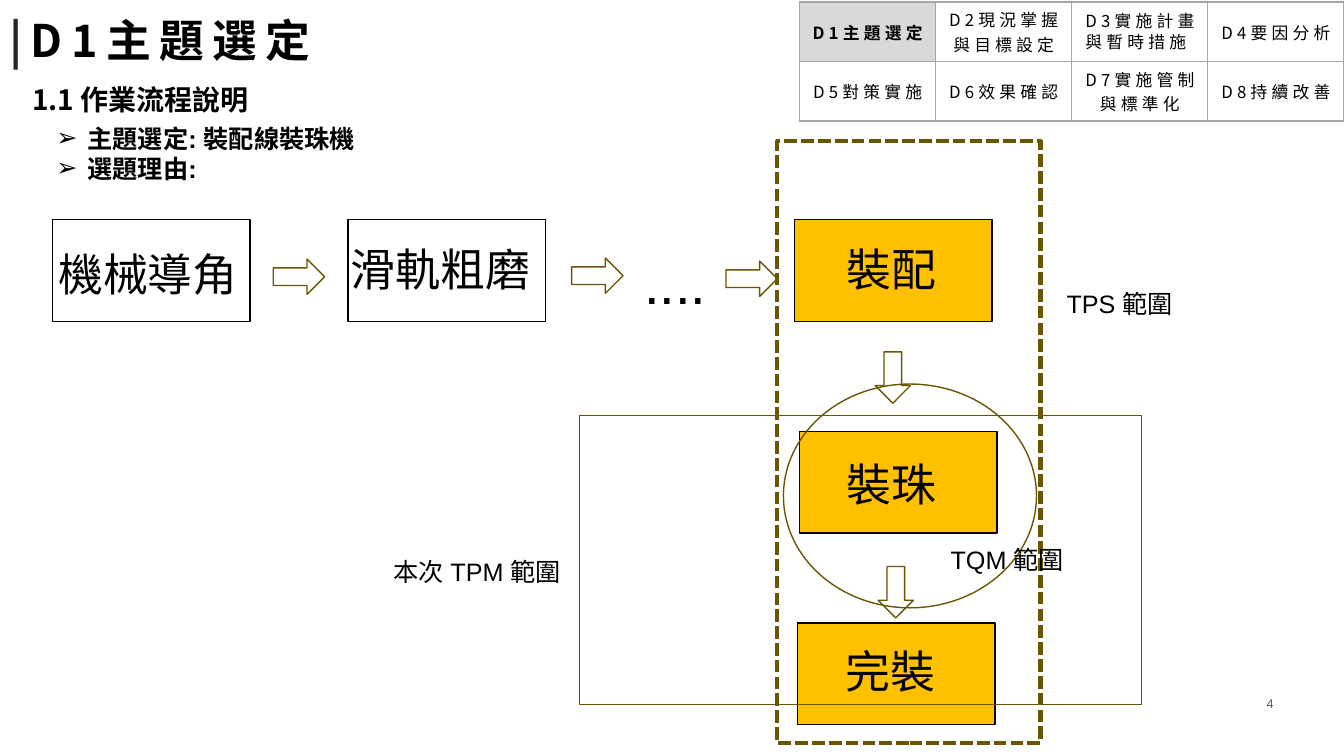
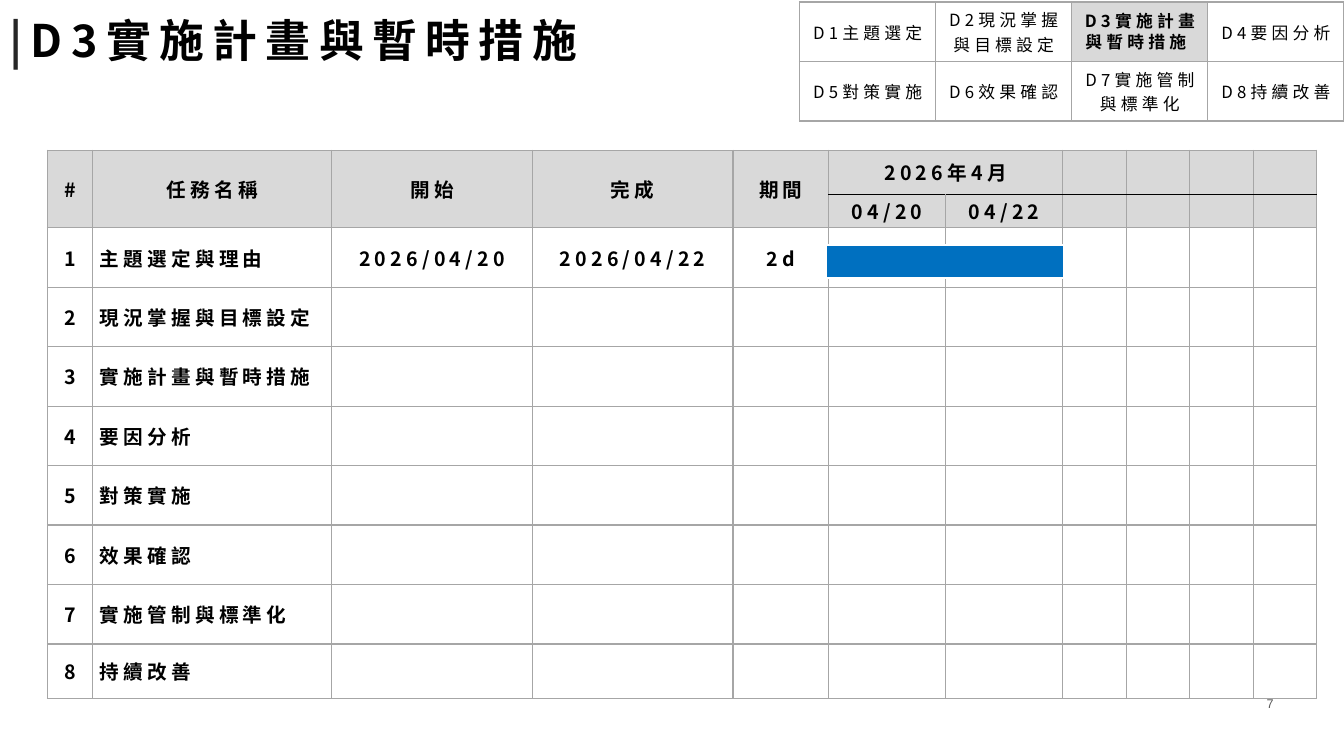
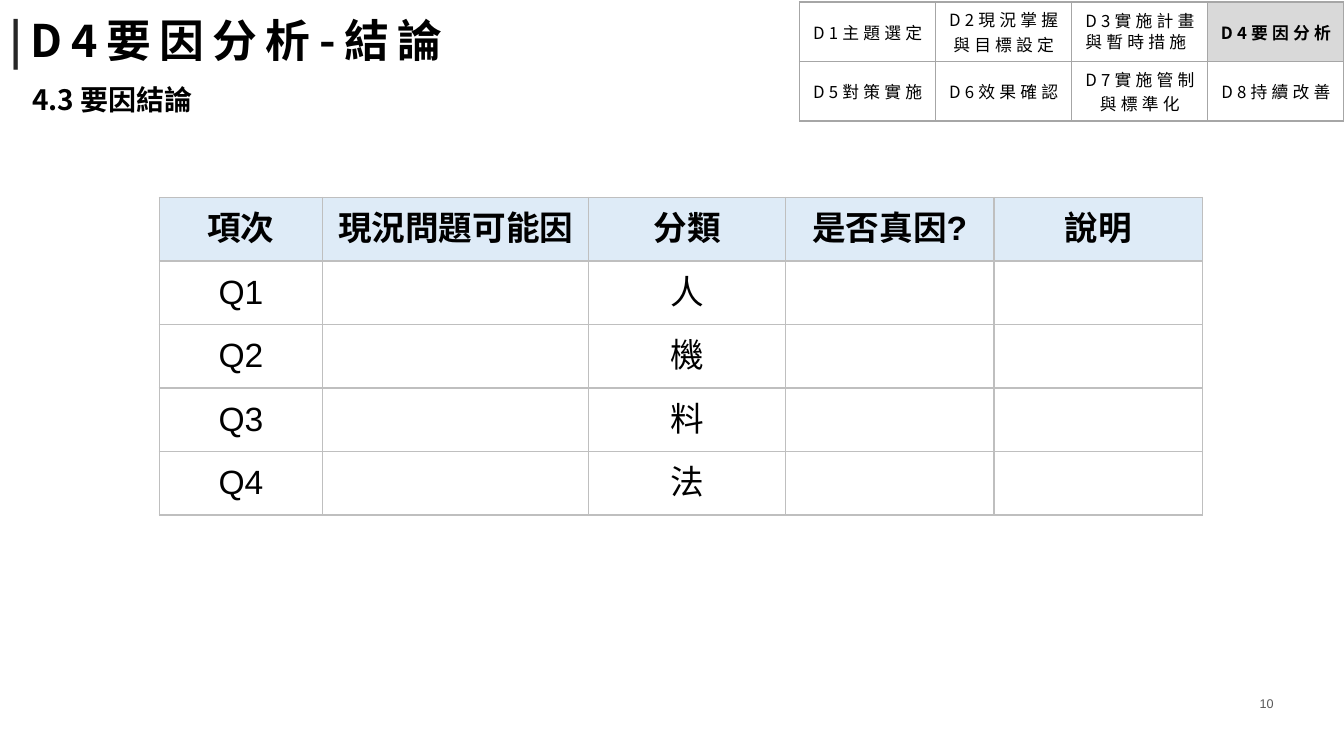
import dataclasses
import typing

import lxml.etree
import pptx
import pptx.dml.color
import pptx.enum.dml
import pptx.enum.shapes
import pptx.enum.text
import pptx.oxml.ns
import pptx.presentation
import pptx.slide
import pptx.table
import pptx.text.text
import pptx.util

Inches = pptx.util.Inches
Pt = pptx.util.Pt
qn = pptx.oxml.ns.qn
SHAPES = pptx.enum.shapes.MSO_SHAPE
ALIGN = pptx.enum.text.PP_ALIGN
MIDDLE = pptx.enum.text.MSO_ANCHOR.MIDDLE

COLORS = {
    "black": "000000", "bar": "262626", "number": "595959", "white": "FFFFFF",
    "grid": "A6A6A6", "light_grid": "BFBFBF", "active": "D9D9D9",
    "header": "DEEBF7", "process": "FFC000", "scope": "6A5600", "gantt": "0070C0",
}
SANS = "Noto Sans CJK SC"


def rgb(name: str) -> pptx.dml.color.RGBColor:
    return pptx.dml.color.RGBColor.from_string(COLORS[name])


@dataclasses.dataclass(frozen=True)
class Style:
    size: float
    bold: bool = False
    font: str = "Arial"
    color: str = "black"
    spacing: float = 0


@dataclasses.dataclass(frozen=True)
class Cell:
    text: str = ""
    fill: str = "white"
    bold: bool = False
    align: ALIGN = ALIGN.CENTER
    line_spacing: float = 1.0


@dataclasses.dataclass(frozen=True)
class Figure:
    kind: SHAPES
    left: float
    top: float
    width: float
    height: float
    line: str = "scope"
    fill: str | None = None
    weight: float = 1
    rotation: float = 0
    dashed: bool = False


@dataclasses.dataclass(frozen=True)
class Label:
    text: str
    left: float
    top: float
    width: float
    height: float
    size: float
    wrap: bool = False


TITLE = Style(32, True, SANS, spacing=6)
SUBTITLE = Style(20, True, SANS)
STEP = Style(12, font=SANS, spacing=3)
PLAN = Style(14, True, SANS, spacing=3)
CAUSE = Style(24)
TITLE_MARGINS = {"margin_left": 0.07, "margin_right": 0.07,
                 "margin_top": 0.04, "margin_bottom": 0.04}
PLAN_MARGINS = {"margin_left": 0.07, "margin_right": 0.07,
                "margin_top": 0, "margin_bottom": 0}
STEPS = [
    "D1主題選定", "D2現況掌握\n與目標設定", "D3實施計畫\n與暫時措施 ", "D4要因分析",
    "D5對策實施", "D6效果確認", "D7實施管制\n與標準化", "D8持續改善",
]


# Text
def add_run(paragraph: pptx.text.text._Paragraph, text: str, style: Style) -> None:
    run = paragraph.add_run()
    run.text = text
    values = {"size": Pt(style.size), "bold": style.bold, "name": style.font}
    for name, value in values.items():
        setattr(run.font, name, value)
    run.font.color.rgb = rgb(style.color)
    properties = run._r.get_or_add_rPr()
    lxml.etree.SubElement(properties, qn("a:ea")).set("typeface", style.font)
    if style.spacing:
        properties.set("spc", str(round(style.spacing * 100)))


def write(frame: pptx.text.text.TextFrame, text: str, style: Style,
          align: ALIGN = ALIGN.LEFT, line_spacing: float = 1.0) -> None:
    for index, line in enumerate(text.split("\n")):
        paragraph = frame.add_paragraph() if index else frame.paragraphs[0]
        paragraph.alignment = align
        if line_spacing != 1:
            paragraph.line_spacing = line_spacing
        add_run(paragraph, line, style)


def add_frame(slide: pptx.slide.Slide, left: float, top: float, width: float,
              height: float, wrap: bool = True) -> pptx.text.text.TextFrame:
    box = slide.shapes.add_textbox(Inches(left), Inches(top), Inches(width), Inches(height))
    box.text_frame.word_wrap = wrap
    return box.text_frame


def add_label(slide: pptx.slide.Slide, label: Label) -> None:
    frame = add_frame(slide, label.left, label.top, label.width, label.height, label.wrap)
    write(frame, label.text, Style(label.size))


def add_bullets(frame: pptx.text.text.TextFrame, text: str, style: Style) -> None:
    write(frame, text, style)
    for paragraph in frame.paragraphs:
        properties = paragraph._p.get_or_add_pPr()
        properties.set("marL", str(Inches(0.31)))
        properties.set("indent", str(-Inches(0.31)))
        lxml.etree.SubElement(properties, qn("a:buFont")).set("typeface", "Arial")
        lxml.etree.SubElement(properties, qn("a:buChar")).set("char", "➢")


# Shapes
def add_figure(slide: pptx.slide.Slide, figure: Figure) -> None:
    shape = slide.shapes.add_shape(
        figure.kind, Inches(figure.left), Inches(figure.top),
        Inches(figure.width), Inches(figure.height))
    shape.shadow.inherit = False
    shape.rotation = figure.rotation
    if figure.fill:
        shape.fill.solid()
        shape.fill.fore_color.rgb = rgb(figure.fill)
    else:
        shape.fill.background()
    shape.line.color.rgb = rgb(figure.line)
    shape.line.width = Pt(figure.weight)
    if figure.dashed:
        shape.line.dash_style = pptx.enum.dml.MSO_LINE.SQUARE_DOT
        # The preset dash is the short system dash
        shape.line._ln.find(qn("a:prstDash")).set("val", "sysDash")


# Tables
def set_border(cell: pptx.table._Cell, side: str, color: str) -> None:
    properties = cell._tc.get_or_add_tcPr()
    edge = properties.find(qn(f"a:ln{side}"))
    if edge is None:
        edge = lxml.etree.SubElement(properties, qn(f"a:ln{side}"), w=str(Pt(1)))
        fill = lxml.etree.SubElement(edge, qn("a:solidFill"))
        lxml.etree.SubElement(fill, qn("a:srgbClr"))
    edge.find(".//" + qn("a:srgbClr")).set("val", COLORS[color])


def add_grid(slide: pptx.slide.Slide, left: float, top: float,
             widths: typing.Sequence[float], heights: typing.Sequence[float],
             rows: typing.Sequence[typing.Sequence[Cell]], style: Style, border: str,
             margins: dict[str, float] | None = None) -> pptx.table.Table:
    table = slide.shapes.add_table(
        len(heights), len(widths), Inches(left), Inches(top),
        Inches(sum(widths)), Inches(sum(heights))).table
    table.first_row = table.horz_banding = False
    for column, width in zip(table.columns, widths):
        column.width = Inches(width)
    for row, height in zip(table.rows, heights):
        row.height = Inches(height)
    for r, row_cells in enumerate(rows):
        for c, content in enumerate(row_cells):
            cell = table.cell(r, c)
            for side in "LRTB":
                set_border(cell, side, border)
            cell.fill.solid()
            cell.fill.fore_color.rgb = rgb(content.fill)
            cell.vertical_anchor = MIDDLE
            for name, value in (margins or {}).items():
                setattr(cell, name, Inches(value))
            if content.text:
                cell_style = dataclasses.replace(style, bold=style.bold or content.bold)
                write(cell.text_frame, content.text, cell_style,
                      content.align, content.line_spacing)
    return table


# Parts shared by all slides
def add_step_map(slide: pptx.slide.Slide, active: int) -> None:
    cells = [
        Cell(step, "active" if number == active else "white", number == active,
             line_spacing=0.85 if number == 3 else 1.0)
        for number, step in enumerate(STEPS, 1)
    ]
    # Each row holds two lines of text plus the cell margins
    add_grid(slide, 7.93, 0.02, [1.35] * 4, [0.59] * 2,
             [cells[:4], cells[4:]], STEP, "grid")


def add_page(deck: pptx.presentation.Presentation, title: str, active: int,
             number: int, subtitle: str = "") -> pptx.slide.Slide:
    slide = deck.slides.add_slide(deck.slide_layouts[6])
    write(add_frame(slide, 12.02, 6.85, 0.71, 0.31), str(number),
          Style(9, color="number"), ALIGN.RIGHT)
    heading = add_frame(slide, 0.02, 0.02, 7.91, 0.75)
    heading.vertical_anchor = MIDDLE
    for name, value in TITLE_MARGINS.items():
        setattr(heading, name, Inches(value))
    write(heading, "|", dataclasses.replace(TITLE, color="bar"))
    add_run(heading.paragraphs[0], title, TITLE)
    add_step_map(slide, active)
    if subtitle:
        write(add_frame(slide, 0.22, 0.77, 4.2, 0.44), subtitle, SUBTITLE)
    return slide


# Process flow
def build_topic(deck: pptx.presentation.Presentation) -> None:
    slide = add_page(deck, "D1主題選定", 1, 4, "1.1 作業流程說明")
    add_bullets(add_frame(slide, 0.46, 1.17, 4.01, 1.01),
                "主題選定: 裝配線裝珠機\n選題理由:", Style(18, True))

    stations = [(0.52, 2.18, None), (3.45, 2.18, None), (7.88, 2.18, "process"),
                (7.93, 4.28, "process"), (7.91, 6.18, "process")]
    arrows = [(2.71, 2.57, 0), (5.67, 2.56, 0), (7.2, 2.59, 0),
              (8.6, 3.57, 90), (8.63, 5.7, 90)]
    figures = [Figure(SHAPES.RECTANGLE, left, top, 1.96, 1.01, "black", fill)
               for left, top, fill in stations]
    figures += [Figure(SHAPES.RIGHT_ARROW, left, top, 0.51, 0.35, rotation=turn)
                for left, top, turn in arrows]
    tps_scope = Figure(SHAPES.RECTANGLE, 7.71, 1.4, 2.61, 5.97, weight=3, dashed=True)
    tpm_scope = Figure(SHAPES.RECTANGLE, 5.75, 4.12, 5.57, 2.87)
    tqm_scope = Figure(SHAPES.OVAL, 7.77, 3.81, 2.51, 2.22)
    for figure in figures + [tps_scope, tpm_scope, tqm_scope]:
        add_figure(slide, figure)

    labels = [
        Label("機械導角", 0.48, 2.4, 2, 0.64, 32),
        Label("滑軌粗磨", 3.38, 2.35, 2, 0.64, 32),
        Label("裝配", 8.3, 2.35, 1.1, 0.64, 32),
        Label("裝珠", 8.3, 4.48, 1.1, 0.64, 32),
        Label("完裝", 8.29, 6.34, 1.1, 0.64, 32),
        Label("....", 6.29, 2.42, 0.83, 0.77, 40),
        Label("TPS 範圍", 10.48, 2.81, 1.34, 0.4, 18),
        Label("本次 TPM 範圍", 3.8, 5.47, 1.9, 0.4, 18, wrap=True),
        Label("TQM 範圍", 9.33, 5.35, 1.41, 0.4, 18),
    ]
    for label in labels:
        add_label(slide, label)


# Schedule
def build_plan(deck: pptx.presentation.Presentation) -> None:
    slide = add_page(deck, "D3實施計畫與暫時措施", 3, 7)
    widths = [0.45, 2.37, 1.99, 1.99, 0.95] + [1.16] * 2 + [0.63] * 4
    heights = [0.44, 0.33] + [0.59] * 7 + [0.54]
    tasks = ["主題選定與理由", "現況掌握與目標設定", "實施計畫與暫時措施", "要因分析",
             "對策實施", "效果確認", "實施管制與標準化", "持續改善"]
    first_dates = ["2026/04/20", "2026/04/22", "2d"]
    headers = [
        ["#", "任務名稱", "開始", "完成", "期間", "2026年4月"] + [""] * 5,
        [""] * 5 + ["04/20", "04/22"] + [""] * 4,
    ]
    rows = [[Cell(text, "active") for text in header] for header in headers]
    for number, task in enumerate(tasks, 1):
        dates = first_dates if number == 1 else [""] * 3
        rows.append([Cell(str(number)), Cell(task, align=ALIGN.LEFT)]
                    + [Cell(text) for text in dates] + [Cell()] * 6)
    table = add_grid(slide, 0.47, 1.49, widths, heights, rows, PLAN, "grid", PLAN_MARGINS)
    for column in range(5):
        table.cell(0, column).merge(table.cell(1, column))
    table.cell(0, 5).merge(table.cell(0, 6))
    for column in range(5, len(widths)):
        set_border(table.cell(0, column), "B", "black")
        set_border(table.cell(1, column), "T", "black")
    add_figure(slide, Figure(SHAPES.RECTANGLE, 8.2, 2.43, 2.35, 0.33, "white", "gantt"))


# Causes
def build_causes(deck: pptx.presentation.Presentation) -> None:
    slide = add_page(deck, "D4要因分析-結論", 4, 10, "4.3 要因結論")
    headers = ["項次", "現況問題可能因", "分類", "是否真因?", "說明"]
    rows = [[Cell(text, "header", True) for text in headers]]
    for number, category in enumerate("人機料法", 1):
        rows.append([Cell(text) for text in (f"Q{number}", "", category, "", "")])
    add_grid(slide, 1.58, 1.96, [1.62, 2.64, 1.95, 2.07, 2.07], [0.63] * 5,
             rows, CAUSE, "light_grid")


def main() -> None:
    deck = pptx.Presentation()
    deck.slide_width, deck.slide_height = Inches(13.33), Inches(7.5)
    for build in (build_topic, build_plan, build_causes):
        build(deck)
    deck.save("out.pptx")


if __name__ == "__main__":
    main()
